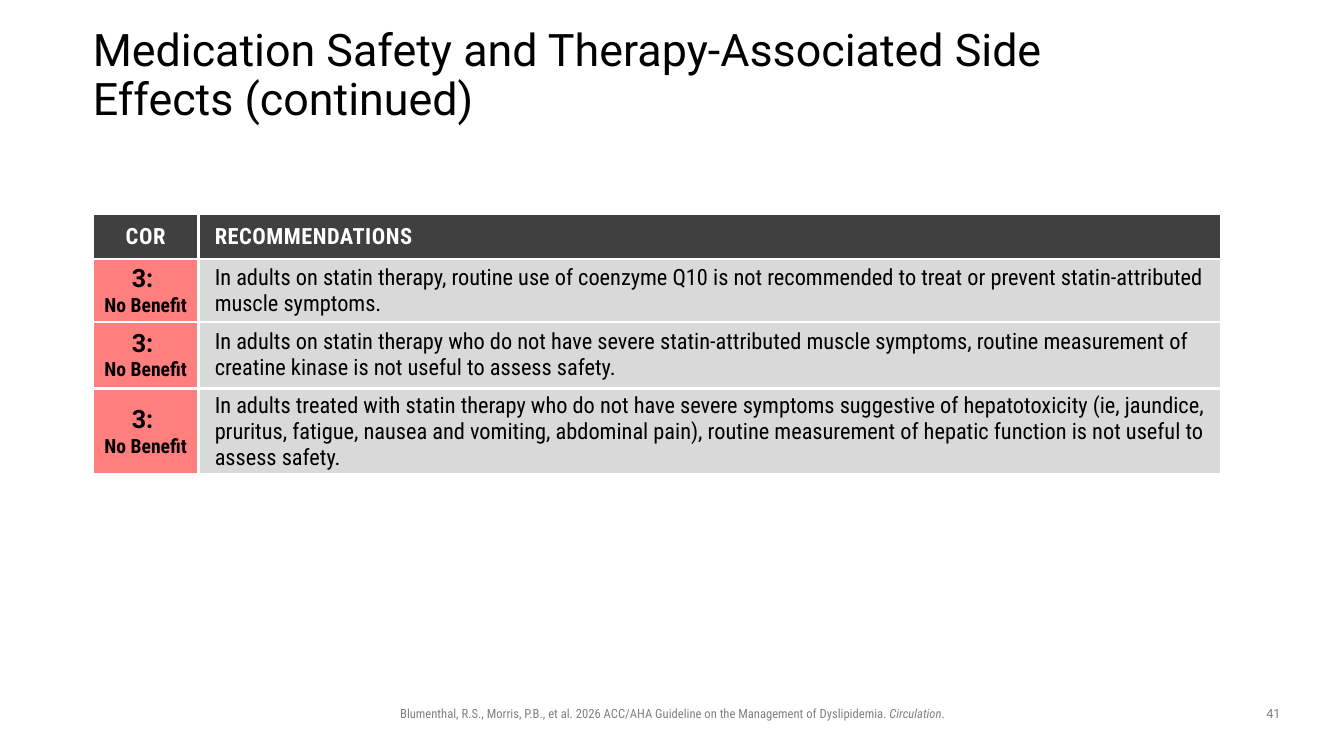
from lxml.etree import SubElement
from pptx import Presentation
from pptx.dml.color import RGBColor
from pptx.enum.text import MSO_ANCHOR, MSO_AUTO_SIZE, PP_ALIGN
from pptx.oxml.ns import qn
from pptx.util import Inches, Pt

BLACK = RGBColor(0x00, 0x00, 0x00)
WHITE = RGBColor(0xFF, 0xFF, 0xFF)
GREY = RGBColor(0x80, 0x80, 0x80)
HEADER_FILL = RGBColor(0x40, 0x40, 0x40)
CLASS_FILL = RGBColor(0xFF, 0x7F, 0x7F)
ADVICE_FILL = RGBColor(0xD9, 0xD9, 0xD9)
SANS = "Roboto"
CONDENSED = "Roboto Condensed"

COLUMN_WIDTHS = (1.05, 10.14)
ROW_HEIGHTS = (0.45, 0.62, 0.66, 0.85)
RECOMMENDATIONS = (
    "In adults on statin therapy, routine use of coenzyme Q10 is not recommended "
    "to treat or prevent statin-attributed muscle symptoms.",
    "In adults on statin therapy who do not have severe statin-attributed muscle symptoms, "
    "routine measurement of creatine kinase is not useful to assess safety.",
    "In adults treated with statin therapy who do not have severe symptoms suggestive of "
    "hepatotoxicity (ie, jaundice, pruritus, fatigue, nausea and vomiting, abdominal pain), "
    "routine measurement of hepatic function is not useful to assess safety.",
)


def add_text(para, text, size=16, font=CONDENSED, color=BLACK, bold=False, italic=False, spacing=0):
    span = para.add_run()
    span.text = text
    span.font.size = Pt(size)
    span.font.name = font
    span.font.bold = bold
    span.font.italic = italic
    span.font.color.rgb = color
    if spacing:
        span.font._element.set("spc", str(round(spacing * 100)))


class GuidelineSlide:
    def __init__(self, deck):
        self.page = deck.slides.add_slide(deck.slide_layouts[5])

    def title(self, text, left, top, width, height):
        box = self.page.shapes.title
        box.left, box.top = Inches(left), Inches(top)
        box.width, box.height = Inches(width), Inches(height)
        frame = box.text_frame
        frame.margin_left = frame.margin_right = frame.margin_top = frame.margin_bottom = 0
        frame.auto_size = MSO_AUTO_SIZE.NONE
        frame.word_wrap = True
        frame.vertical_anchor = MSO_ANCHOR.MIDDLE
        para = frame.paragraphs[0]
        para.alignment = PP_ALIGN.LEFT
        para.line_spacing = 0.9
        add_text(para, text, size=32, font=SANS)

    def text_box(self, left, top, width, height):
        box = self.page.shapes.add_textbox(Inches(left), Inches(top), Inches(width), Inches(height))
        box.text_frame.word_wrap = True
        para = box.text_frame.paragraphs[0]
        para.alignment = PP_ALIGN.CENTER
        return para

    def table(self, left, top, widths, heights):
        frame = self.page.shapes.add_table(
            len(heights), len(widths), Inches(left), Inches(top),
            Inches(sum(widths)), Inches(sum(heights)))
        table = frame.table
        table.horz_banding = False
        for column, width in zip(table.columns, widths):
            column.width = Inches(width)
        for row, height in zip(table.rows, heights):
            row.height = Inches(height)
        return table

    def cell(self, cell, fill, margin=None, indent=None):
        properties = cell._tc.get_or_add_tcPr()
        for side in ("a:lnL", "a:lnR", "a:lnT", "a:lnB"):
            line = SubElement(properties, qn(side), w=str(Pt(2.25)))
            SubElement(SubElement(line, qn("a:solidFill")), qn("a:srgbClr"), val=str(WHITE))
        cell.fill.solid()
        cell.fill.fore_color.rgb = fill
        cell.vertical_anchor = MSO_ANCHOR.MIDDLE
        if margin is not None:
            cell.margin_left = cell.margin_right = Inches(margin)
            cell.margin_top = cell.margin_bottom = Inches(margin)
        para = cell.text_frame.paragraphs[0]
        if indent is None:
            para.alignment = PP_ALIGN.CENTER
        else:
            para.alignment = PP_ALIGN.LEFT
            para._p.get_or_add_pPr().set("marL", str(Inches(indent)))
        return para


def main():
    deck = Presentation()
    deck.slide_width, deck.slide_height = Inches(13.33), Inches(7.5)
    slide = GuidelineSlide(deck)

    slide.title("Medication Safety and Therapy-Associated Side Effects (continued)",
                0.92, 0.4, 10.42, 0.72)

    table = slide.table(0.92, 2.12, COLUMN_WIDTHS, ROW_HEIGHTS)
    add_text(slide.cell(table.cell(0, 0), HEADER_FILL), "COR", color=WHITE, bold=True, spacing=0.5)
    add_text(slide.cell(table.cell(0, 1), HEADER_FILL, indent=0.06), "RECOMMENDATIONS",
             color=WHITE, bold=True, spacing=0.4)
    for row, advice in enumerate(RECOMMENDATIONS, start=1):
        para = slide.cell(table.cell(row, 0), CLASS_FILL, margin=0.05)
        add_text(para, "3: ", size=18, font=SANS, bold=True)
        para.add_line_break()
        add_text(para, "No Benefit", size=14, bold=True)
        add_text(slide.cell(table.cell(row, 1), ADVICE_FILL, margin=0.04, indent=0.12), advice)

    citation = slide.text_box(2.36, 6.95, 8.62, 0.25)
    add_text(citation, "Blumenthal, R.S., Morris, P.B., et al. 2026 ACC/AHA Guideline on the "
             "Management of Dyslipidemia. ", size=9, color=GREY)
    add_text(citation, "Circulation", size=9, color=GREY, italic=True)
    add_text(citation, ".", size=9, color=GREY)
    add_text(slide.text_box(12.42, 6.95, 0.42, 0.26), "41", size=9, font=SANS, color=GREY)

    deck.save("out.pptx")


if __name__ == "__main__":
    main()
